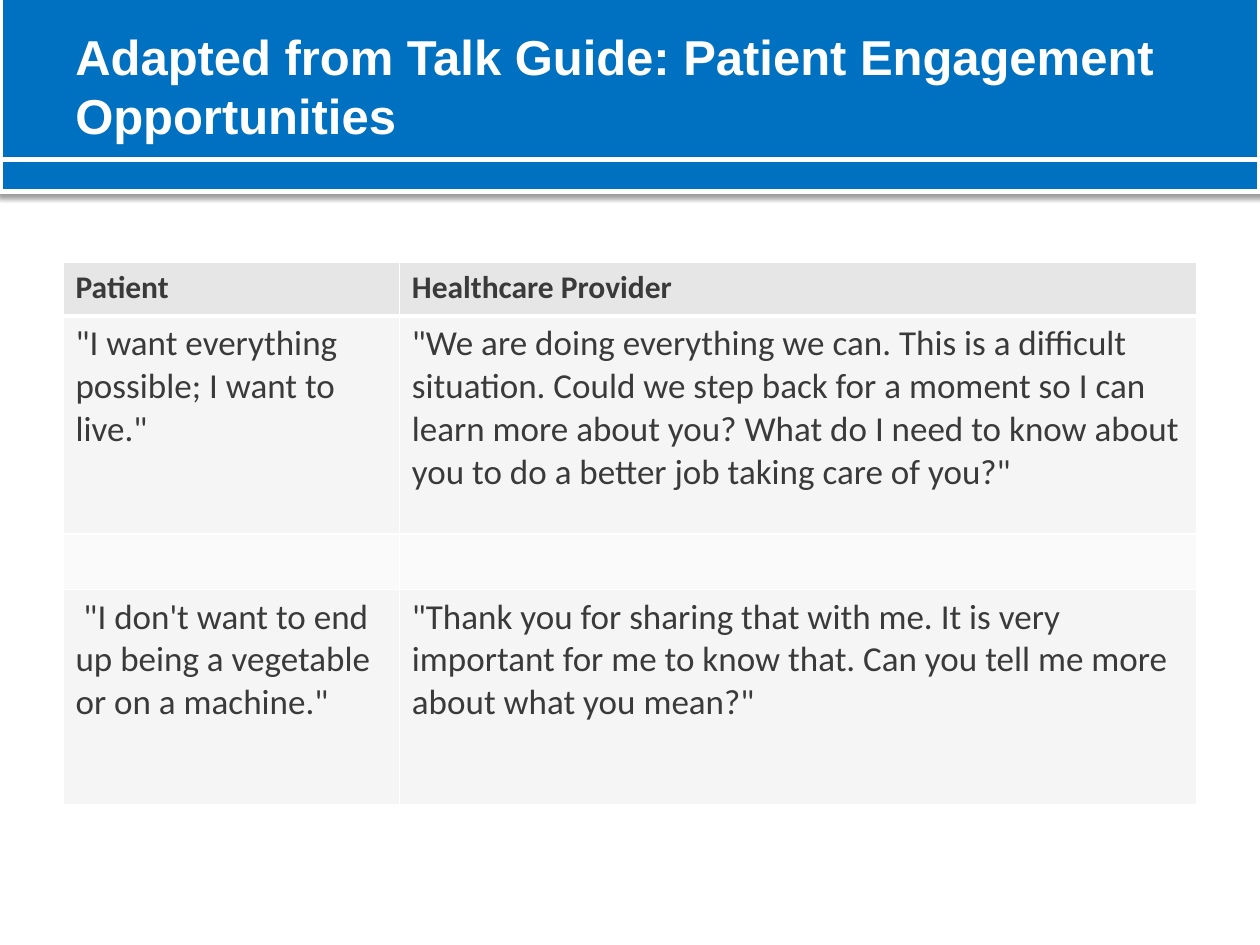
from dataclasses import dataclass

from lxml import etree
from pptx import Presentation
from pptx.dml.color import RGBColor
from pptx.enum.shapes import MSO_SHAPE
from pptx.enum.text import MSO_ANCHOR
from pptx.oxml import parse_xml
from pptx.oxml.ns import nsdecls
from pptx.util import Cm, Pt

RECT = MSO_SHAPE.RECTANGLE
MIDDLE = MSO_ANCHOR.MIDDLE

BLUE = RGBColor(0x00, 0x70, 0xC0)
WHITE = RGBColor(0xFF, 0xFF, 0xFF)
INK = RGBColor(0x3A, 0x3A, 0x3A)
HEADER_GREY = RGBColor(0xE6, 0xE6, 0xE6)
BAND_GREY = RGBColor(0xF5, 0xF5, 0xF5)
PALE_GREY = RGBColor(0xFA, 0xFA, 0xFA)

SLIDE_W, SLIDE_H = Cm(25.4), Cm(19.05)
MARGIN = Cm(1.27)
COLUMN_WIDTHS = (Cm(6.78), Cm(16.08))


@dataclass
class Band:
    top: float
    height: float


@dataclass
class Row:
    height: float
    fill: RGBColor
    texts: tuple[str, str]
    size: int = 20
    bold: bool = False
    bottom_border: float = 1


BANDS = (Band(-0.13, 3.35), Band(3.22, 0.64))

ROWS = (
    Row(1.09, HEADER_GREY, ("Patient", "Healthcare Provider"),
        size=18, bold=True, bottom_border=3),
    Row(4.39, BAND_GREY, (
        '"I want everything possible; I want to live."',
        '"We are doing everything we can. This is a difficult situation. '
        'Could we step back for a moment so I can learn more about you? '
        'What do I need to know about you to do a better job taking care of you?"')),
    Row(1.12, PALE_GREY, ("", "")),
    Row(4.34, BAND_GREY, (
        ' "I don\'t want to end up being a vegetable or on a machine."',
        '"Thank you for sharing that with me. It is very important for me to '
        'know that. Can you tell me more about what you mean?"')),
)


def write_text(tf, text: str, *, size: float, font: str, color: RGBColor,
               bold: bool = False) -> None:
    r = tf.paragraphs[0].add_run()
    r.text = text
    r.font.size = Pt(size)
    r.font.name = font
    r.font.bold = bold
    r.font.color.rgb = color


def draw_band(slide, band: Band) -> None:
    sp = slide.shapes.add_shape(RECT, 0, Cm(band.top), SLIDE_W, Cm(band.height))
    sp.fill.solid()
    sp.fill.fore_color.rgb = BLUE
    sp.line.color.rgb = WHITE
    sp.line.width = Pt(3)
    sp._element.spPr.append(parse_xml(
        f'<a:effectLst {nsdecls("a")}>'
        f'<a:outerShdw blurRad="{Pt(3.1)}" dist="{Pt(1.6)}" dir="5400000" rotWithShape="0">'
        '<a:srgbClr val="000000"><a:alpha val="38000"/></a:srgbClr>'
        '</a:outerShdw></a:effectLst>'))


def draw_title(slide, text: str) -> None:
    tf = slide.shapes.add_textbox(MARGIN, Cm(0.13), Cm(22.86), Cm(3.18)).text_frame
    tf.word_wrap = True
    tf.vertical_anchor = MIDDLE
    write_text(tf, text, size=28, font="Arial", color=WHITE, bold=True)


def set_borders(cell, widths: dict[str, float]) -> None:
    """Give the cell white borders, which the schema wants ahead of its fill."""
    tc_pr = cell._tc.get_or_add_tcPr()
    for i, (side, width) in enumerate(widths.items()):
        ln = parse_xml(f'<a:ln{side} {nsdecls("a")} w="{Pt(width)}"/>')
        fill = etree.SubElement(ln, "{%s}solidFill" % ln.nsmap["a"])
        etree.SubElement(fill, "{%s}srgbClr" % ln.nsmap["a"], val=str(WHITE))
        tc_pr.insert(i, ln)


def draw_table(slide, rows: tuple[Row, ...]) -> None:
    height = Cm(sum(row.height for row in rows))
    table = slide.shapes.add_table(len(rows), len(COLUMN_WIDTHS), MARGIN, Cm(5.28),
                                   sum(COLUMN_WIDTHS), height).table
    for column, width in zip(table.columns, COLUMN_WIDTHS):
        column.width = width
    top_border = 1
    for i, row in enumerate(rows):
        table.rows[i].height = Cm(row.height)
        for cell, text in zip(table.rows[i].cells, row.texts):
            cell.fill.solid()
            cell.fill.fore_color.rgb = row.fill
            set_borders(cell, {"L": 1, "R": 1, "T": top_border, "B": row.bottom_border})
            if text:
                write_text(cell.text_frame, text, size=row.size, font="Calibri",
                           color=INK, bold=row.bold)
        top_border = row.bottom_border


def main() -> None:
    prs = Presentation()
    prs.slide_width, prs.slide_height = SLIDE_W, SLIDE_H
    slide = prs.slides.add_slide(prs.slide_layouts[6])
    for band in BANDS:
        draw_band(slide, band)
    draw_title(slide, "Adapted from Talk Guide: Patient Engagement Opportunities")
    draw_table(slide, ROWS)
    prs.save("out.pptx")


if __name__ == "__main__":
    main()
